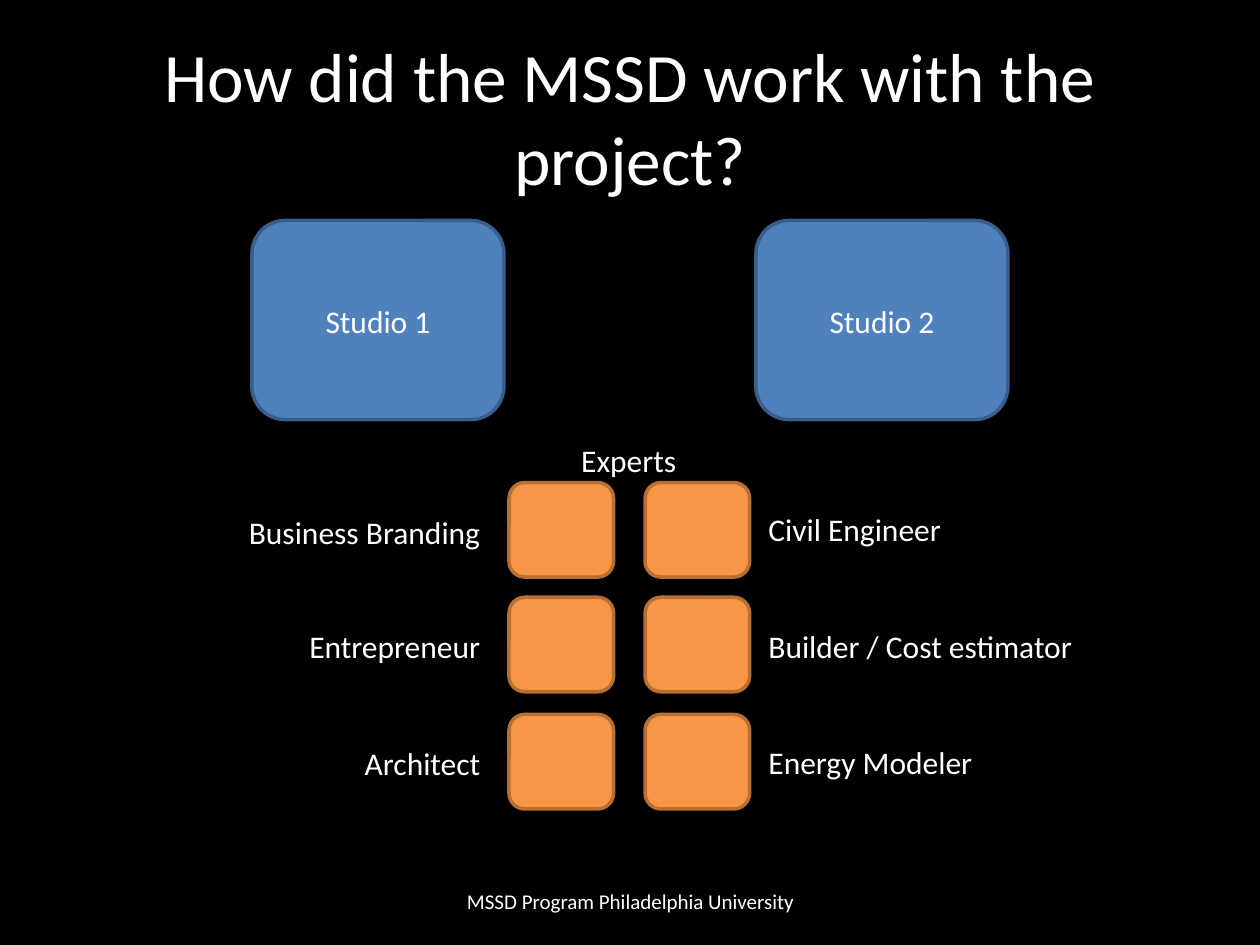
"""Build the slide showing how the MSSD studios and experts worked on the project."""
import pptx
import pptx.dml.color
import pptx.enum.shapes
import pptx.enum.text
import pptx.util

Inches = pptx.util.Inches
ALIGN = pptx.enum.text.PP_ALIGN
ANCHOR = pptx.enum.text.MSO_ANCHOR

THEME = {
    "font": "Calibri",
    "background": "000000",
    "text": "FFFFFF",
    "studio": ("4F81BD", "3A5F8C"),
    "expert": ("F79646", "B76F34"),
    "title_size": 39.6,
    "label_size": 18,
    "footer_size": 12,
    "line_width": 2,
}


def add_text(shapes, text, left, top, width, height, size, align, anchor=ANCHOR.TOP):
    tf = shapes.add_textbox(Inches(left), Inches(top), Inches(width), Inches(height)).text_frame
    tf.word_wrap = True
    tf.vertical_anchor = anchor
    p = tf.paragraphs[0]
    p.alignment = align
    r = p.add_run()
    r.text = text
    r.font.name = THEME["font"]
    r.font.size = pptx.util.Pt(size)
    r.font.color.rgb = pptx.dml.color.RGBColor.from_string(THEME["text"])


def add_box(shapes, left, top, width, height, colors):
    sp = shapes.add_shape(
        pptx.enum.shapes.MSO_SHAPE.ROUNDED_RECTANGLE,
        Inches(left), Inches(top), Inches(width), Inches(height),
    )
    fill, line = colors
    sp.shadow.inherit = False
    sp.fill.solid()
    sp.fill.fore_color.rgb = pptx.dml.color.RGBColor.from_string(fill)
    sp.line.color.rgb = pptx.dml.color.RGBColor.from_string(line)
    sp.line.width = pptx.util.Pt(THEME["line_width"])


prs = pptx.Presentation()
prs.slide_width = Inches(10)
prs.slide_height = Inches(7.5)
s = prs.slides.add_slide(prs.slide_layouts[6])
s.background.fill.solid()
s.background.fill.fore_color.rgb = pptx.dml.color.RGBColor.from_string(THEME["background"])

add_text(s.shapes, "MSSD Program Philadelphia University", 3.42, 6.95, 3.17, 0.4,
         THEME["footer_size"], ALIGN.CENTER, ANCHOR.MIDDLE)
add_text(s.shapes, "How did the MSSD work with the project?", 0.5, 0.3, 9, 1.25,
         THEME["title_size"], ALIGN.CENTER, ANCHOR.MIDDLE)

experts = s.shapes.add_group_shape()
for left in (4.04, 5.12):
    for top in (3.83, 4.74, 5.67):
        add_box(experts.shapes, left, top, 0.83, 0.75, THEME["expert"])

for name, left in (("Studio 1", 2), ("Studio 2", 6)):
    studio = s.shapes.add_group_shape()
    add_box(studio.shapes, left, 1.75, 2, 1.58, THEME["studio"])
    add_text(studio.shapes, name, left + 0.375, 2.35, 1.25, 0.4,
             THEME["label_size"], ALIGN.CENTER)

labels = [
    ("Business Branding", 0.83, 4.02, ALIGN.RIGHT),
    ("Entrepreneur", 0.83, 4.93, ALIGN.RIGHT),
    ("Architect", 0.83, 5.86, ALIGN.RIGHT),
    ("Civil Engineer", 6, 4, ALIGN.LEFT),
    ("Builder / Cost estimator", 6, 4.93, ALIGN.LEFT),
    ("Energy Modeler", 6, 5.85, ALIGN.LEFT),
    ("Experts", 3.45, 3.45, ALIGN.CENTER),
]
for text, left, top, align in labels:
    add_text(s.shapes, text, left, top, 3.08, 0.4, THEME["label_size"], align)

prs.save("out.pptx")
